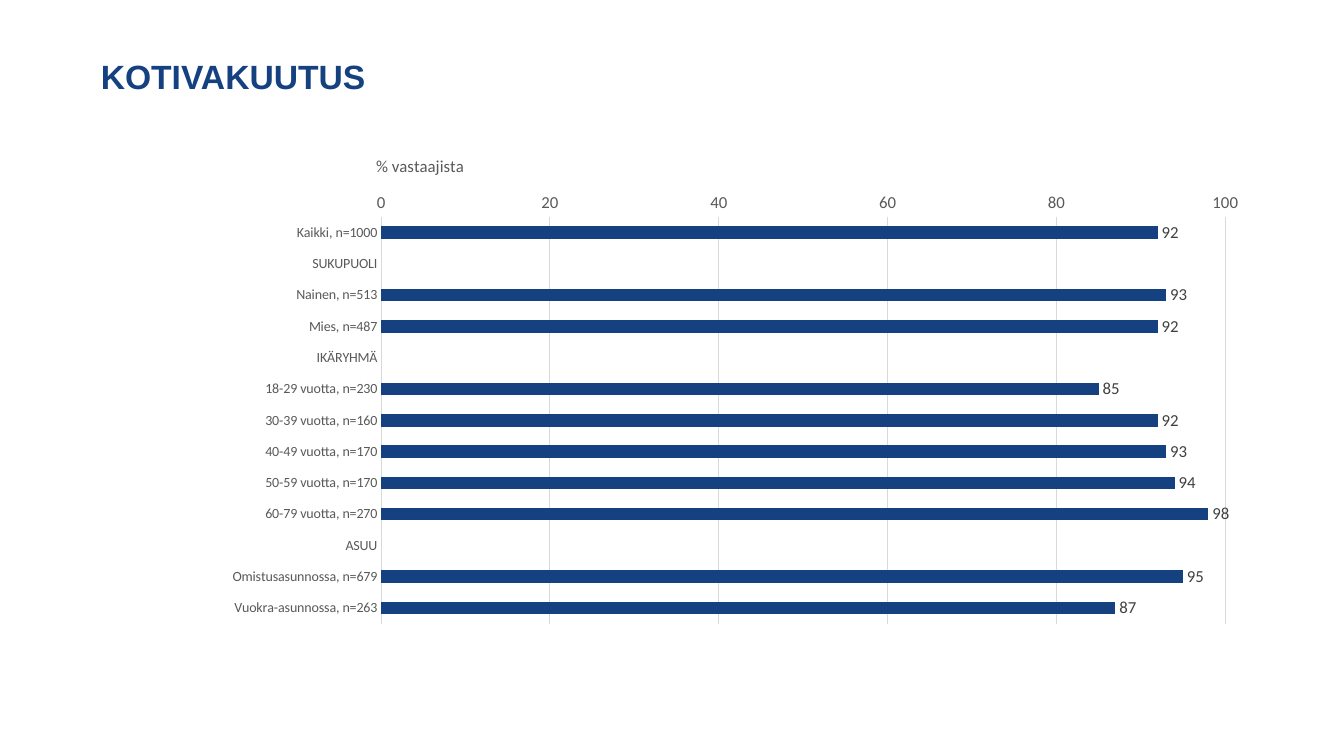
import pptx
import pptx.chart.data
import pptx.dml.color
import pptx.enum.chart
import pptx.enum.text
import pptx.oxml
import pptx.oxml.ns
import pptx.util
from pptx.util import Inches, Pt

TITLE = "KOTIVAKUUTUS"
CHART_TITLE = "% vastaajista"
SHARES = [
    ("Kaikki, n=1000", 92),
    ("SUKUPUOLI", None),
    ("Nainen, n=513", 93),
    ("Mies, n=487", 92),
    ("IKÄRYHMÄ", None),
    ("18-29 vuotta, n=230", 85),
    ("30-39 vuotta, n=160", 92),
    ("40-49 vuotta, n=170", 93),
    ("50-59 vuotta, n=170", 94),
    ("60-79 vuotta, n=270", 98),
    ("ASUU", None),
    ("Omistusasunnossa, n=679", 95),
    ("Vuokra-asunnossa, n=263", 87),
]

BLUE = pptx.dml.color.RGBColor(0x16, 0x41, 0x80)
GRAY = pptx.dml.color.RGBColor(0x59, 0x59, 0x59)
DARK_GRAY = pptx.dml.color.RGBColor(0x40, 0x40, 0x40)
LIGHT_GRAY = pptx.dml.color.RGBColor(0xD9, 0xD9, 0xD9)


def style_font(font, size, color, name="Calibri", bold=False):
    font.name = name
    font.size = Pt(size)
    font.color.rgb = color
    font.bold = bold


def style_line(line):
    line.color.rgb = LIGHT_GRAY
    line.width = Pt(0.75)


def set_layout(element, index, target=None, **fractions):
    """Place a chart part by fractions of the chart's width and height."""
    for old_layout in element.findall(pptx.oxml.ns.qn("c:layout")):
        element.remove(old_layout)
    settings = {"layoutTarget": target} if target else {}
    settings.update(xMode="edge", yMode="edge", **fractions)
    children = "".join(f'<c:{tag} val="{value}"/>' for tag, value in settings.items())
    layout = pptx.oxml.parse_xml(
        f'<c:layout {pptx.oxml.ns.nsdecls("c")}>'
        f"<c:manualLayout>{children}</c:manualLayout></c:layout>"
    )
    element.insert(index, layout)


def add_title(slide):
    title = slide.shapes.title
    title.left, title.top = Inches(0.9), Inches(0.19)
    title.width, title.height = Inches(11.54), Inches(1.18)
    title.text_frame.text = TITLE
    title.text_frame.vertical_anchor = pptx.enum.text.MSO_ANCHOR.MIDDLE
    paragraph = title.text_frame.paragraphs[0]
    paragraph.alignment = pptx.enum.text.PP_ALIGN.LEFT
    paragraph.line_spacing = 0.9
    style_font(paragraph.runs[0].font, 24, BLUE, "Arial", True)


def add_share_chart(slide):
    data = pptx.chart.data.CategoryChartData()
    data.categories = [label for label, share in SHARES]
    data.add_series("Series 1", [share for label, share in SHARES])
    chart = slide.shapes.add_chart(
        pptx.enum.chart.XL_CHART_TYPE.BAR_CLUSTERED,
        Inches(0.94), Inches(1.46), Inches(11.5), Inches(4.88), data,
    ).chart
    chart.has_legend = False
    chart.font.name = "Calibri"
    chart.font.size = Pt(10)

    chart.has_title = True
    chart.chart_title.text_frame.text = CHART_TITLE
    title_run = chart.chart_title.text_frame.paragraphs[0].runs[0]
    style_font(title_run.font, 12, GRAY)
    set_layout(chart.chart_title._element, 1, x=0.24, y=0.01)
    set_layout(chart._chartSpace.chart.plotArea, 0, "inner",
               x=0.247, y=0.142, w=0.728, h=0.827)

    categories, values = chart.category_axis, chart.value_axis
    for axis, size in ((categories, 10), (values, 12)):
        axis.major_tick_mark = pptx.enum.chart.XL_TICK_MARK.NONE
        axis.minor_tick_mark = pptx.enum.chart.XL_TICK_MARK.NONE
        style_font(axis.tick_labels.font, size, GRAY)
    categories.reverse_order = True
    style_line(categories.format.line)
    values.minimum_scale, values.maximum_scale = 0, 100
    values.major_unit = 20
    values.tick_labels.number_format = "#,##0"
    values.tick_labels.number_format_is_linked = False
    values.format.line.fill.background()
    style_line(values.major_gridlines.format.line)

    plot = chart.plots[0]
    plot.gap_width = 150
    plot.vary_by_categories = False
    bars = plot.series[0]
    bars.format.fill.solid()
    bars.format.fill.fore_color.rgb = BLUE
    labels = bars.data_labels
    labels.show_value = True
    labels.position = pptx.enum.chart.XL_LABEL_POSITION.OUTSIDE_END
    style_font(labels.font, 12, DARK_GRAY)


def main():
    presentation = pptx.Presentation()
    presentation.slide_width = Inches(13.33)
    presentation.slide_height = Inches(7.5)
    slide = presentation.slides.add_slide(presentation.slide_layouts[5])
    add_share_chart(slide)
    add_title(slide)
    presentation.save("out.pptx")


if __name__ == "__main__":
    main()
